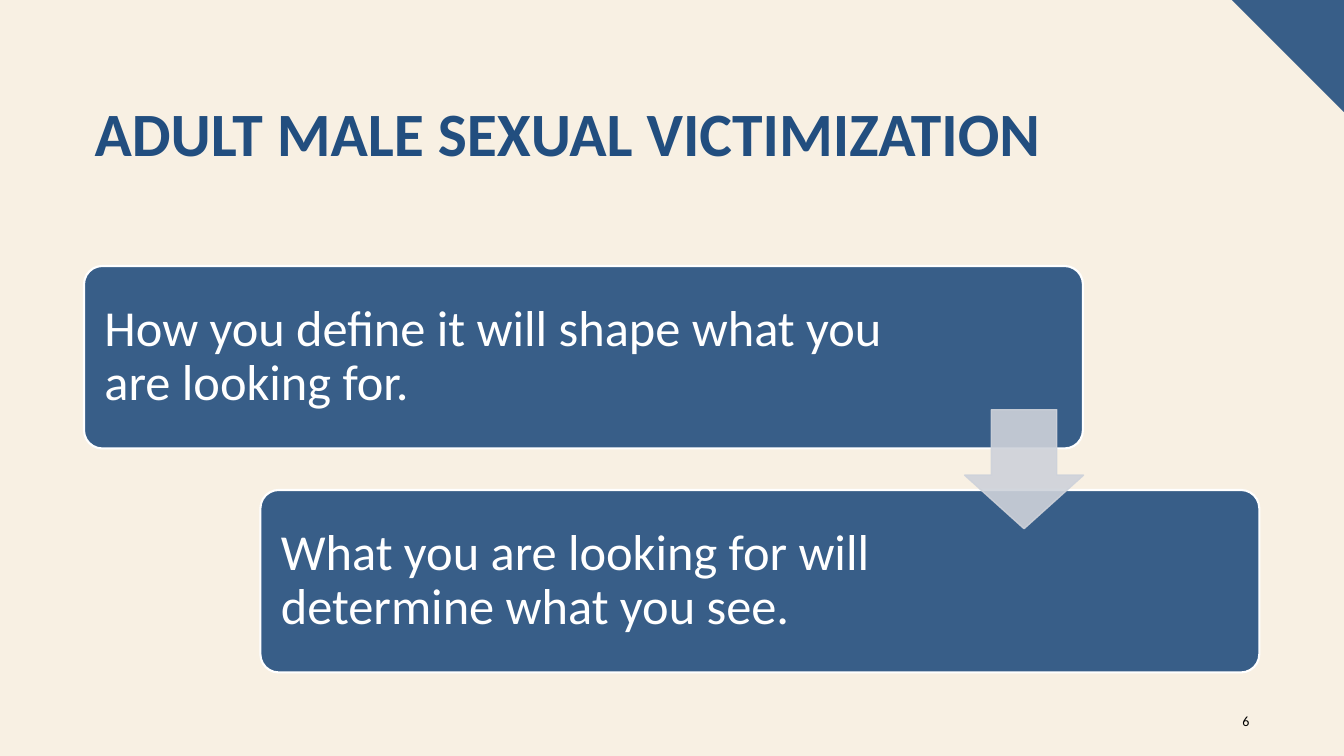
"""Build the slide on how definitions shape what is seen in adult male victimization."""
from lxml.etree import SubElement
from pptx import Presentation
from pptx.dml.color import RGBColor
from pptx.enum.shapes import MSO_SHAPE as Shape
from pptx.enum.text import MSO_ANCHOR as Anchor, PP_ALIGN as Align
from pptx.oxml.ns import qn
from pptx.util import Pt

TITLE = "ADULT MALE SEXUAL VICTIMIZATION"
PAGE_NUMBER = "6"
STEPS = [
    ("How you define it will shape what you are looking for.", 137.5),
    ("What you are looking for will determine what you see.", 221),
]

FONT = "Calibri"
CREAM = RGBColor(0xF8, 0xF0, 0xE3)
BLUE = RGBColor(0x38, 0x5E, 0x88)
NAVY = RGBColor(0x22, 0x4E, 0x7F)
GREY = RGBColor(0xCE, 0xD2, 0xDA)
WHITE = RGBColor(0xFF, 0xFF, 0xFF)
BLACK = RGBColor(0x00, 0x00, 0x00)

WIDTH, HEIGHT = 960, 540
CORNER = 80
CARD_LEFT, CARD_TOP, CARD_WIDTH, CARD_HEIGHT = 60, 190, 713.5, 130.3
STEP_RIGHT, STEP_DOWN = 126, 160
CARD_INSET = 10.8
ARROW_SIZE = 85


def write(shape, text, size, color, anchor, align=Align.LEFT, bold=False, spacing=1.0):
    frame = shape.text_frame
    frame.text = text
    frame.word_wrap = True
    frame.vertical_anchor = anchor
    para = frame.paragraphs[0]
    para.alignment = align
    para.line_spacing = spacing
    font = para.runs[0].font
    font.name, font.size, font.bold = FONT, Pt(size), bold
    font.color.rgb = color


def paint(shape, fill, line=None, weight=1):
    shape.shadow.inherit = False
    shape.fill.solid()
    shape.fill.fore_color.rgb = fill
    if line is None:
        shape.line.fill.background()
    else:
        shape.line.color.rgb = line
        shape.line.width = Pt(weight)


def add_box(page, left, top, width, height):
    return page.shapes.add_textbox(Pt(left), Pt(top), Pt(width), Pt(height))


def add_corner(page):
    builder = page.shapes.build_freeform(Pt(WIDTH - CORNER), 0)
    builder.add_line_segments([(Pt(WIDTH), 0), (Pt(WIDTH), Pt(CORNER))], close=True)
    paint(builder.convert_to_shape(), BLUE)


def add_step(page, index, text, right_inset):
    card = page.shapes.add_shape(
        Shape.ROUNDED_RECTANGLE,
        Pt(CARD_LEFT + index * STEP_RIGHT), Pt(CARD_TOP + index * STEP_DOWN),
        Pt(CARD_WIDTH), Pt(CARD_HEIGHT))
    card.adjustments[0] = 0.1
    paint(card, BLUE, WHITE, 1.5)
    write(card, text, 36, WHITE, Anchor.MIDDLE, spacing=0.9)
    card.text_frame.margin_left = Pt(CARD_INSET)
    card.text_frame.margin_right = Pt(right_inset)


def add_arrow(page):
    left = CARD_LEFT + CARD_WIDTH - ARROW_SIZE + 0.5
    gap_middle = CARD_TOP + (CARD_HEIGHT + STEP_DOWN) / 2
    arrow = page.shapes.add_shape(
        Shape.DOWN_ARROW, Pt(left), Pt(gap_middle - ARROW_SIZE / 2),
        Pt(ARROW_SIZE), Pt(ARROW_SIZE))
    arrow.adjustments[0], arrow.adjustments[1] = 0.55, 0.45
    paint(arrow, GREY, GREY)
    for color in arrow._element.spPr.iter(qn("a:srgbClr")):
        SubElement(color, qn("a:alpha")).set("val", "90000")


def main():
    deck = Presentation()
    deck.slide_width, deck.slide_height = Pt(WIDTH), Pt(HEIGHT)
    page = deck.slides.add_slide(deck.slide_layouts[6])
    page.background.fill.solid()
    page.background.fill.fore_color.rgb = CREAM

    add_corner(page)
    write(add_box(page, 60.5, 70.5, 839.5, 104.5), TITLE, 44, NAVY, Anchor.TOP,
          bold=True, spacing=0.9)
    write(add_box(page, 863.5, 500.5, 36, 29), PAGE_NUMBER, 10, BLACK, Anchor.MIDDLE,
          Align.RIGHT)
    for index, (text, right_inset) in enumerate(STEPS):
        add_step(page, index, text, right_inset)
    add_arrow(page)
    deck.save("out.pptx")


if __name__ == "__main__":
    main()
